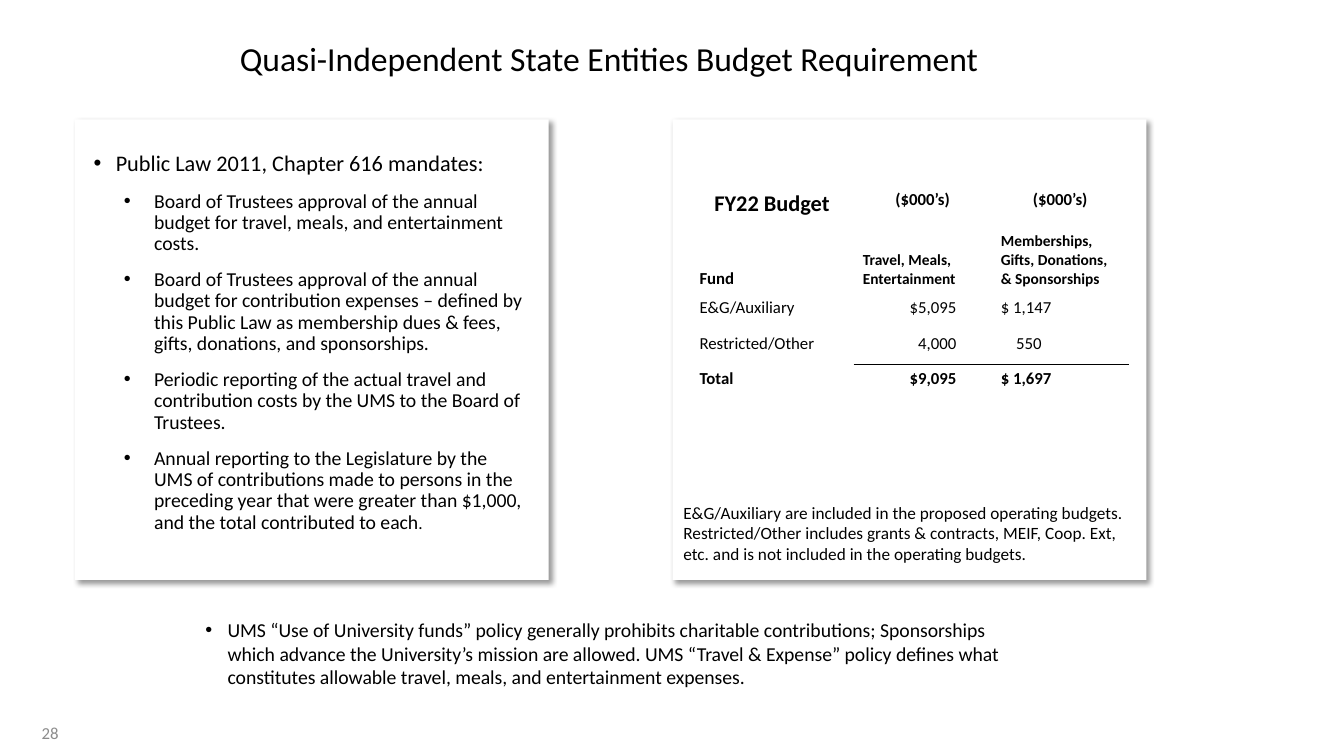
from dataclasses import dataclass

from lxml import etree
from pptx import Presentation
from pptx.dml.color import RGBColor
from pptx.enum.shapes import MSO_SHAPE
from pptx.enum.text import MSO_ANCHOR, PP_ALIGN
from pptx.oxml import parse_xml
from pptx.oxml.ns import nsdecls, qn
from pptx.util import Pt

RECTANGLE = MSO_SHAPE.RECTANGLE
TOP, MIDDLE, BOTTOM = MSO_ANCHOR.TOP, MSO_ANCHOR.MIDDLE, MSO_ANCHOR.BOTTOM
LEFT, CENTER, RIGHT = PP_ALIGN.LEFT, PP_ALIGN.CENTER, PP_ALIGN.RIGHT
NO_GRID_STYLE = "{2D5ABB26-0587-4C30-8999-92F81FD0307C}"


@dataclass(frozen=True)
class Theme:
    font: str = "Calibri"
    black: str = "000000"
    white: str = "FFFFFF"
    gray: str = "8C8C8C"
    title: float = 24
    heading: float = 15.9
    body: float = 14.1
    note: float = 12.3
    table_title: float = 16
    table: float = 12
    column_head: float = 11


THEME = Theme()


def write(paragraph, text, size=THEME.body, color=THEME.black, bold=False,
          align=LEFT, spacing=None, before=0, bullet=None):
    """Fill a paragraph; bullet is a pair of left margin and hanging indent."""
    if bullet:
        margin, hanging = bullet
        properties = paragraph._p.get_or_add_pPr()
        properties.set("marL", str(Pt(margin)))
        properties.set("indent", str(-Pt(hanging)))
        etree.SubElement(properties, qn("a:buFont")).set("typeface", "Arial")
        etree.SubElement(properties, qn("a:buChar")).set("char", "•")
    paragraph.alignment = align
    paragraph.space_before = Pt(before)
    if spacing:
        paragraph.line_spacing = spacing
    run = paragraph.add_run()
    run.text = text
    run.font.name = THEME.font
    run.font.size = Pt(size)
    run.font.bold = bold
    run.font.color.rgb = RGBColor.from_string(color)


class SlideBuilder:
    def __init__(self, slide, theme):
        self.slide = slide
        self.theme = theme

    def text(self, left, top, width, height, paragraphs, anchor=TOP):
        """Add a text box from (text, format) pairs."""
        box = self.slide.shapes.add_textbox(Pt(left), Pt(top), Pt(width), Pt(height))
        frame = box.text_frame
        frame.word_wrap = True
        frame.vertical_anchor = anchor
        for index, (text, style) in enumerate(paragraphs):
            paragraph = frame.add_paragraph() if index else frame.paragraphs[0]
            write(paragraph, text, **style)
        return frame

    def card(self, left, top, width, height):
        """Add a white panel with a soft shadow at the lower right."""
        shape = self.slide.shapes.add_shape(
            RECTANGLE, Pt(left), Pt(top), Pt(width), Pt(height))
        shape.fill.solid()
        shape.fill.fore_color.rgb = RGBColor.from_string(self.theme.white)
        shape.line.fill.background()
        shape.shadow.inherit = False
        effects = shape._element.spPr.find(qn("a:effectLst"))
        effects.append(parse_xml(
            f'<a:outerShdw {nsdecls("a")} blurRad="{Pt(4)}" dist="{Pt(3)}" '
            f'dir="2700000" algn="tl" rotWithShape="0">'
            f'<a:srgbClr val="{self.theme.black}"><a:alpha val="40000"/></a:srgbClr>'
            f'</a:outerShdw>'))

    def table(self, left, top, widths, heights):
        """Add an empty table without grid or bands."""
        table = self.slide.shapes.add_table(
            len(heights), len(widths), Pt(left), Pt(top),
            Pt(sum(widths)), Pt(sum(heights))).table
        table.first_row = table.horz_banding = False
        table._tbl.tblPr.find(qn("a:tableStyleId")).text = NO_GRID_STYLE
        for column, width in zip(table.columns, widths):
            column.width = Pt(width)
        for row, height in zip(table.rows, heights):
            row.height = Pt(height)
        return table

    def cell(self, cell, text, anchor=TOP, left=6.5, right=6.5, border=None, **style):
        """Fill a table cell; border is lnT or lnB."""
        cell.margin_left, cell.margin_right = Pt(left), Pt(right)
        cell.margin_top = cell.margin_bottom = Pt(3)
        cell.vertical_anchor = anchor
        cell.fill.background()
        write(cell.text_frame.paragraphs[0], text, **style)
        if border:
            cell._tc.get_or_add_tcPr().insert(0, parse_xml(
                f'<a:{border} {nsdecls("a")} w="{Pt(1)}"><a:solidFill>'
                f'<a:srgbClr val="{self.theme.black}"/></a:solidFill></a:{border}>'))


def add_budget_table(builder):
    theme = builder.theme
    row_height = 25.7
    table = builder.table(493.2, 132.5, [116.6, 98.6, 97.9],
                          [row_height, 51.1] + [row_height] * 3)

    # Two heading rows
    for column, text in enumerate(["FY22 Budget", "($000’s)", "($000’s)"]):
        builder.cell(table.cell(0, column), text, align=CENTER, bold=True,
                     size=theme.table if column else theme.table_title)
    heads = ["Fund", "Travel, Meals, Entertainment",
             "Memberships, Gifts, Donations, & Sponsorships"]
    for column, text in enumerate(heads):
        builder.cell(table.cell(1, column), text, anchor=BOTTOM, bold=True,
                     size=theme.column_head if column else theme.table)

    # Amounts, with a rule above the total
    amounts = [("E&G/Auxiliary", "$5,095", "$ 1,147", None),
               ("Restricted/Other", "4,000", "550", "lnB"),
               ("Total", "$9,095", "$ 1,697", "lnT")]
    for row, (fund, travel, gifts, border) in enumerate(amounts, start=2):
        style = {"size": theme.table, "bold": fund == "Total"}
        builder.cell(table.cell(row, 0), fund, **style)
        builder.cell(table.cell(row, 1), travel, right=25.2, align=RIGHT,
                     border=border, **style)
        builder.cell(table.cell(row, 2), gifts, right=25.2, border=border,
                     left=6.5 if gifts.startswith("$") else 17.5, **style)


def main():
    presentation = Presentation()
    presentation.slide_width, presentation.slide_height = Pt(960), Pt(540)
    slide = presentation.slides.add_slide(presentation.slide_layouts[6])
    builder = SlideBuilder(slide, THEME)

    # Title and page number
    builder.text(164.2, 23, 580.3, 40.3, [
        ("Quasi-Independent State Entities Budget Requirement",
         {"size": THEME.title, "spacing": 0.9})], anchor=MIDDLE)
    builder.text(0, 509, 49, 28.8, [
        ("28", {"size": THEME.table, "color": THEME.gray, "align": RIGHT})],
        anchor=MIDDLE)

    # Panels
    for left in (53.5, 480.5):
        builder.card(left, 85.2, 338.4, 329)

    # Mandates of the law
    mandate = {"spacing": 0.9, "before": 10.6, "bullet": (43.2, 21.6)}
    mandates = [
        "Board of Trustees approval of the annual budget for travel, meals, and "
        "entertainment costs.",
        "Board of Trustees approval of the annual budget for contribution expenses – "
        "defined by this Public Law as membership dues & fees, gifts, donations, and "
        "sponsorships.",
        "Periodic reporting of the actual travel and contribution costs by the UMS to "
        "the Board of Trustees.",
        "Annual reporting to the Legislature by the UMS of contributions made to persons "
        "in the preceding year that were greater than $1,000, and the total contributed "
        "to each",
    ]
    frame = builder.text(59.8, 105.1, 325.4, 317.5, [
        ("Public Law 2011, Chapter 616 mandates:",
         {"size": THEME.heading, "spacing": 0.9, "bullet": (15.8, 15.8)}),
        *((text, mandate) for text in mandates)])
    write(frame.paragraphs[-1], ".", size=THEME.note, spacing=0.9, before=10.6)

    # Budget table and its note
    add_budget_table(builder)
    builder.text(481, 355, 344.2, 51.8, [
        ("E&G/Auxiliary are included in the proposed operating budgets. "
         "Restricted/Other includes grants & contracts, MEIF, Coop. Ext, etc. and is "
         "not included in the operating budgets.", {"size": THEME.note})])

    # Policy statement
    builder.text(139.7, 437.8, 608.4, 58.3, [
        ("UMS “Use of University funds” policy generally prohibits charitable "
         "contributions; Sponsorships which advance the University’s mission are "
         "allowed. UMS “Travel & Expense” policy defines what constitutes allowable "
         "travel, meals, and entertainment expenses.", {"bullet": (15.8, 15.8)})])

    presentation.save("out.pptx")


if __name__ == "__main__":
    main()
